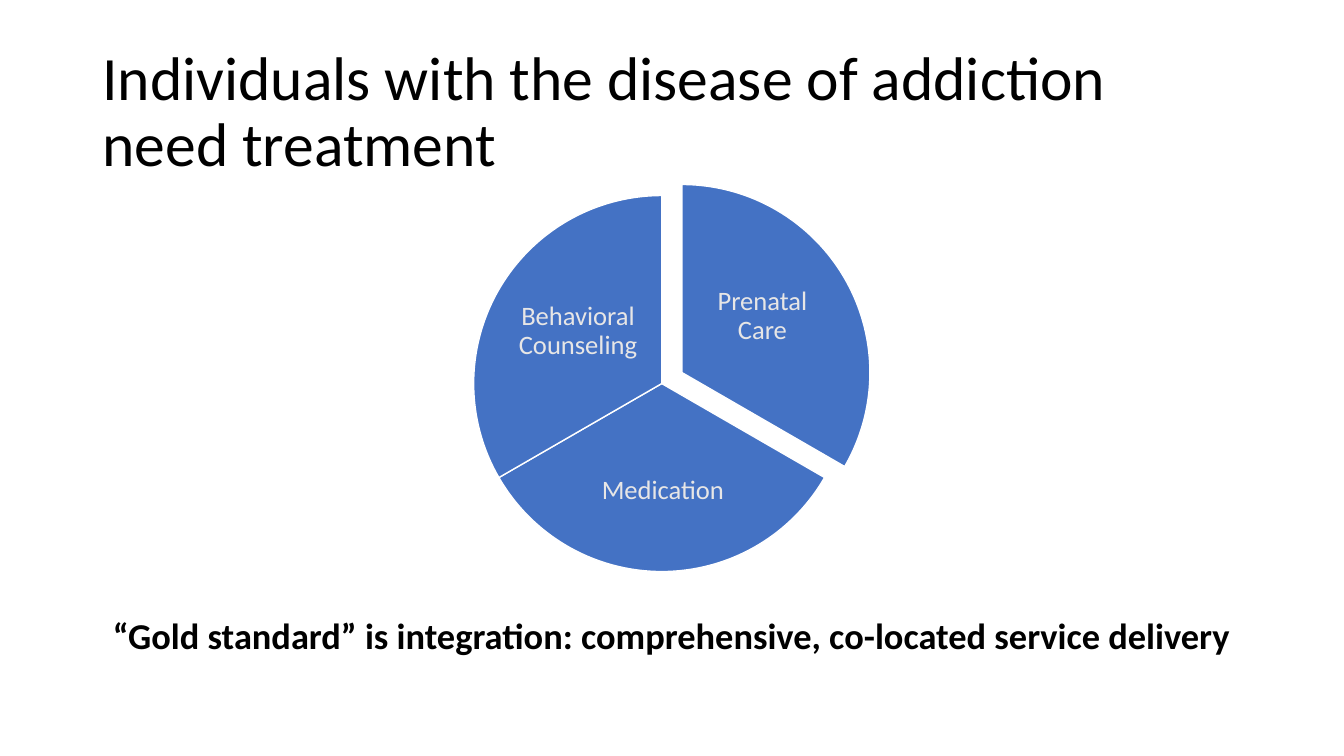
from pptx import Presentation
from pptx.dml.color import RGBColor as Rgb
from pptx.enum.shapes import MSO_SHAPE as Shape
from pptx.enum.text import MSO_ANCHOR as Anchor, MSO_AUTO_SIZE as Fit, PP_ALIGN as Align
from pptx.util import Pt

HUES = {"ink": "000000", "slice": "4472C4", "edge": "FFFFFF", "label": "E7E6E6"}
STEP = 72
PARTS = [
    ("Prenatal Care", (14.4, -7.9), (160.5, 41.7, 91.4, 89.3)),
    ("Medication", (0, 0), (74.2, 169.2, 121.7, 83.5)),
    ("Behavioral Counseling", (0, 0), (28.8, 52.6, 91.4, 89.3)),
]


def hue(name):
    return Rgb.from_string(HUES[name])


def place(shape, box):
    shape.left, shape.top, shape.width, shape.height = map(Pt, box)


def write(shape, text, size, color="ink", bold=False, align=Align.CENTER,
          anchor=Anchor.MIDDLE, space=None, inset=None, fit=Fit.NONE):
    frame = shape.text_frame
    frame.word_wrap = True
    frame.auto_size = fit
    frame.vertical_anchor = anchor
    if inset is not None:
        frame.margin_left = frame.margin_right = Pt(inset)
        frame.margin_top = frame.margin_bottom = Pt(inset)
    para = frame.paragraphs[0]
    para.text = text
    para.alignment = align
    para.line_spacing = space
    for run in para.runs:
        font = run.font
        font.name, font.size, font.bold = "Calibri", Pt(size), bold
        font.color.rgb = hue(color)


def head(slide, box):
    title = slide.shapes.title
    place(title, box)
    write(title, "Individuals with the disease of addiction \vneed treatment",
          44, align=Align.LEFT, space=0.9)


def wheel(slide, box):
    left, top, width, height = box
    shapes = slide.shapes.add_group_shape().shapes
    for i, (text, (dx, dy), (x, y, w, h)) in enumerate(PARTS):
        pie = shapes.add_shape(Shape.PIE, Pt(left + dx), Pt(top + dy), Pt(width), Pt(height))
        start = (162 + i * STEP) % (3 * STEP)
        pie.adjustments[0] = start
        pie.adjustments[1] = (start + STEP) % (3 * STEP)
        pie.shadow.inherit = False
        pie.fill.solid()
        pie.fill.fore_color.rgb = hue("slice")
        pie.line.color.rgb = hue("edge")
        pie.line.width = Pt(1)
        label = shapes.add_textbox(Pt(left + x), Pt(top + y), Pt(w), Pt(h))
        write(label, text, 19, color="label", space=0.9, inset=1.9)


def foot(slide, box):
    note = slide.shapes.add_textbox(*map(Pt, box))
    write(note, "“Gold standard” is integration: comprehensive, co-located service delivery",
          26, bold=True, anchor=Anchor.TOP, fit=Fit.SHAPE_TO_FIT_TEXT)


def main():
    deck = Presentation()
    deck.slide_width, deck.slide_height = Pt(960), Pt(540)
    slide = deck.slides.add_slide(deck.slide_layouts[5])
    head(slide, (66, 28.8, 828, 104.4))
    wheel(slide, (338.4, 139.7, 268.6, 268.6))
    foot(slide, (57.6, 434.2, 845.3, 38.9))
    deck.save("out.pptx")


if __name__ == "__main__":
    main()
